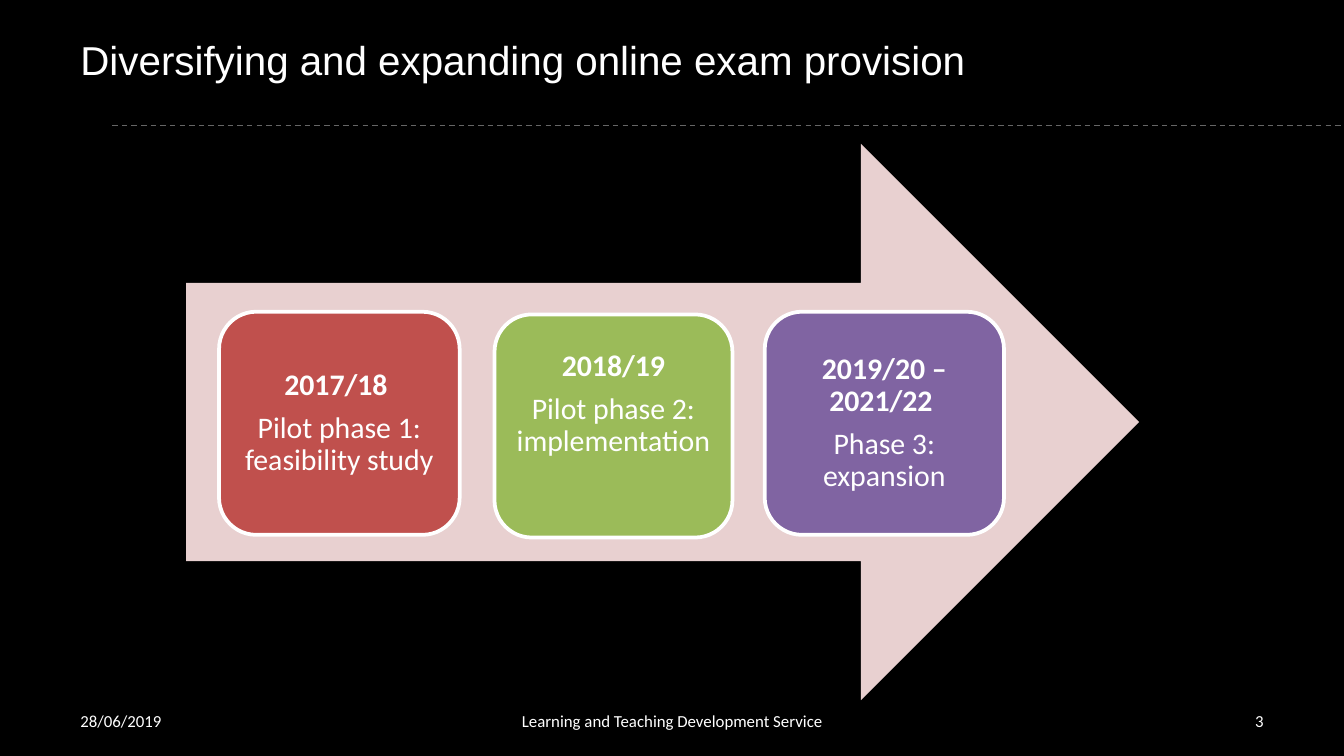
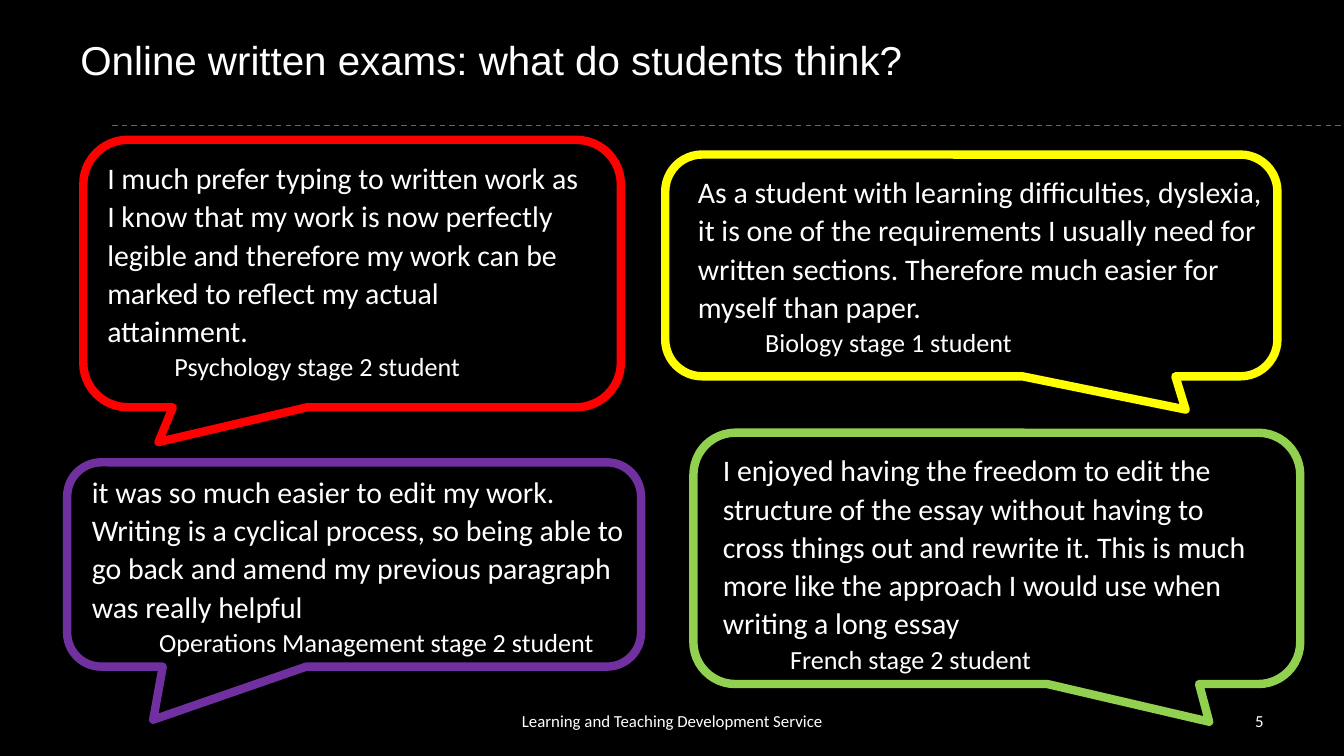
from lxml import etree
from pptx import Presentation
from pptx import util as u
from pptx.dml.color import RGBColor
from pptx.enum import dml, shapes, text
from pptx.oxml import ns

PX = 4572
WHITE, BLACK, GREY, PINK = "FFFFFF", "000000", "666666", "E8D0D0"
HEADING_FONT, BODY_FONT = "Arial", "Calibri"
LEFT, CENTRE, RIGHT = text.PP_ALIGN.LEFT, text.PP_ALIGN.CENTER, text.PP_ALIGN.RIGHT

PAGE_SIZE = (2000, 1125)
SERVICE = "Learning and Teaching Development Service"

PHASES_TITLE = "Diversifying and expanding online exam provision"
ARROW = (277, 214, 1418, 828)
PHASES = [
    ("2017/18 ", "Pilot phase 1: feasibility study", "C0504D", (326, 464, 358, 332), 14),
    ("2018/19", "Pilot phase 2: implementation", "9BBB59", (736, 468, 354, 332), 79),
    ("2019/20 – 2021/22 ", "Phase 3: expansion", "8064A2", (1138, 464, 356, 332), 14),
]

QUOTES_TITLE = "Online written exams: what do students think?"
QUOTES = [
    ("I much prefer typing to written work as I know that my work is now perfectly "
     "legible and therefore my work can be marked to reflect my actual attainment.",
     "Psychology stage 2 student", "FF0000",
     (140, 224, 746, 358), (124, 208, 800, 398), (-0.36, 0.63)),
    ("As a student with learning difficulties, dyslexia, it is one of the requirements "
     "I usually need for written sections. Therefore much easier for myself than paper.",
     "Biology stage 1 student", "FFFF00",
     (1019, 245, 904, 302), (990, 230, 911, 330), (0.35, 0.65)),
    ("it was so much easier to edit my work. Writing is a cyclical process, so being able "
     "to go back and amend my previous paragraph was really helpful",
     "Operations Management stage 2 student", "7030A0",
     (117, 691, 852, 302), (100, 688, 854, 304), (-0.35, 0.76)),
    ("I enjoyed having the freedom to edit the structure of the essay without having to "
     "cross things out and rewrite it. This is much more like the approach I would use "
     "when writing a long essay",
     "French stage 2 student", "92D050",
     (1056, 659, 844, 358), (1032, 644, 903, 374), (0.35, 0.65)),
]


def px(*lengths):
    return [u.Emu(length * PX) for length in lengths]


def colour(value):
    return RGBColor.from_string(value)


def write(para, words, size, font=BODY_FONT, bold=False, align=LEFT):
    para.text = words
    para.alignment = align
    para.font.size = u.Pt(size)
    para.font.name = font
    para.font.bold = bold
    para.font.color.rgb = colour(WHITE)


def add_box(page, place, anchor=text.MSO_ANCHOR.MIDDLE):
    frame = page.shapes.add_textbox(*px(*place)).text_frame
    frame.word_wrap = True
    frame.vertical_anchor = anchor
    return frame


def add_label(page, place, words, size, font=BODY_FONT, align=LEFT):
    write(add_box(page, place).paragraphs[0], words, size, font, align=align)


def add_outline(page, kind, place, fill=None, line=None, width=0):
    shape = page.shapes.add_shape(kind, *px(*place))
    shape.shadow.inherit = False
    if fill:
        shape.fill.solid()
        shape.fill.fore_color.rgb = colour(fill)
    else:
        shape.fill.background()
    if line:
        shape.line.color.rgb = colour(line)
        shape.line.width = u.Pt(width)
    else:
        shape.line.fill.background()
    return shape


def add_page(deck, title, number, date=None):
    page = deck.slides.add_slide(deck.slide_layouts[6])
    page.background.fill.solid()
    page.background.fill.fore_color.rgb = colour(BLACK)
    rule = page.shapes.add_connector(shapes.MSO_CONNECTOR.STRAIGHT, *px(167, 187, 2000, 187))
    rule.line.color.rgb = colour(GREY)
    rule.line.width = u.Pt(0.75)
    rule.line.dash_style = dml.MSO_LINE.DASH
    etree.SubElement(rule._element.spPr, ns.qn("a:effectLst"))
    add_label(page, (100, 39, 1412, 100), title, 21.6, HEADING_FONT)
    if date:
        add_label(page, (100, 1043, 466, 60), date, 9)
    add_label(page, (618, 1043, 764, 60), SERVICE, 9, align=CENTRE)
    add_label(page, (1434, 1043, 466, 60), number, 9, align=RIGHT)
    return page


def add_phase(page, years, stage, fill, place, bottom):
    card = add_outline(page, shapes.MSO_SHAPE.ROUNDED_RECTANGLE, place, fill, WHITE, 2)
    frame = card.text_frame
    frame.word_wrap = True
    frame.vertical_anchor = text.MSO_ANCHOR.MIDDLE
    frame.margin_left, frame.margin_top, frame.margin_right, frame.margin_bottom = px(
        14, 14, 14, bottom)
    write(frame.paragraphs[0], years, 16, bold=True, align=CENTRE)
    write(frame.add_paragraph(), stage, 16, align=CENTRE)
    for para in frame.paragraphs:
        para.line_spacing = 0.9
        para.space_after = u.Pt(5.6)


def add_quote(page, words, student, line, place, bubble, tip):
    frame = add_box(page, place, text.MSO_ANCHOR.TOP)
    write(frame.paragraphs[0], words, 16)
    source = frame.add_paragraph()
    write(source, student, 14)
    source._p.get_or_add_pPr().set("marL", str(100 * PX))
    source.space_after = u.Pt(8)
    for para in frame.paragraphs:
        para.line_spacing = 1.07
    callout = add_outline(page, shapes.MSO_SHAPE.ROUNDED_RECTANGULAR_CALLOUT, bubble,
                          line=line, width=4.5)
    callout.adjustments[0], callout.adjustments[1] = tip


def main():
    deck = Presentation()
    deck.slide_width, deck.slide_height = px(*PAGE_SIZE)

    page = add_page(deck, PHASES_TITLE, "3", "28/06/2019")
    add_outline(page, shapes.MSO_SHAPE.RIGHT_ARROW, ARROW, PINK)
    for phase in PHASES:
        add_phase(page, *phase)

    page = add_page(deck, QUOTES_TITLE, "5")
    for quote in QUOTES:
        add_quote(page, *quote)

    deck.save("out.pptx")


if __name__ == "__main__":
    main()
